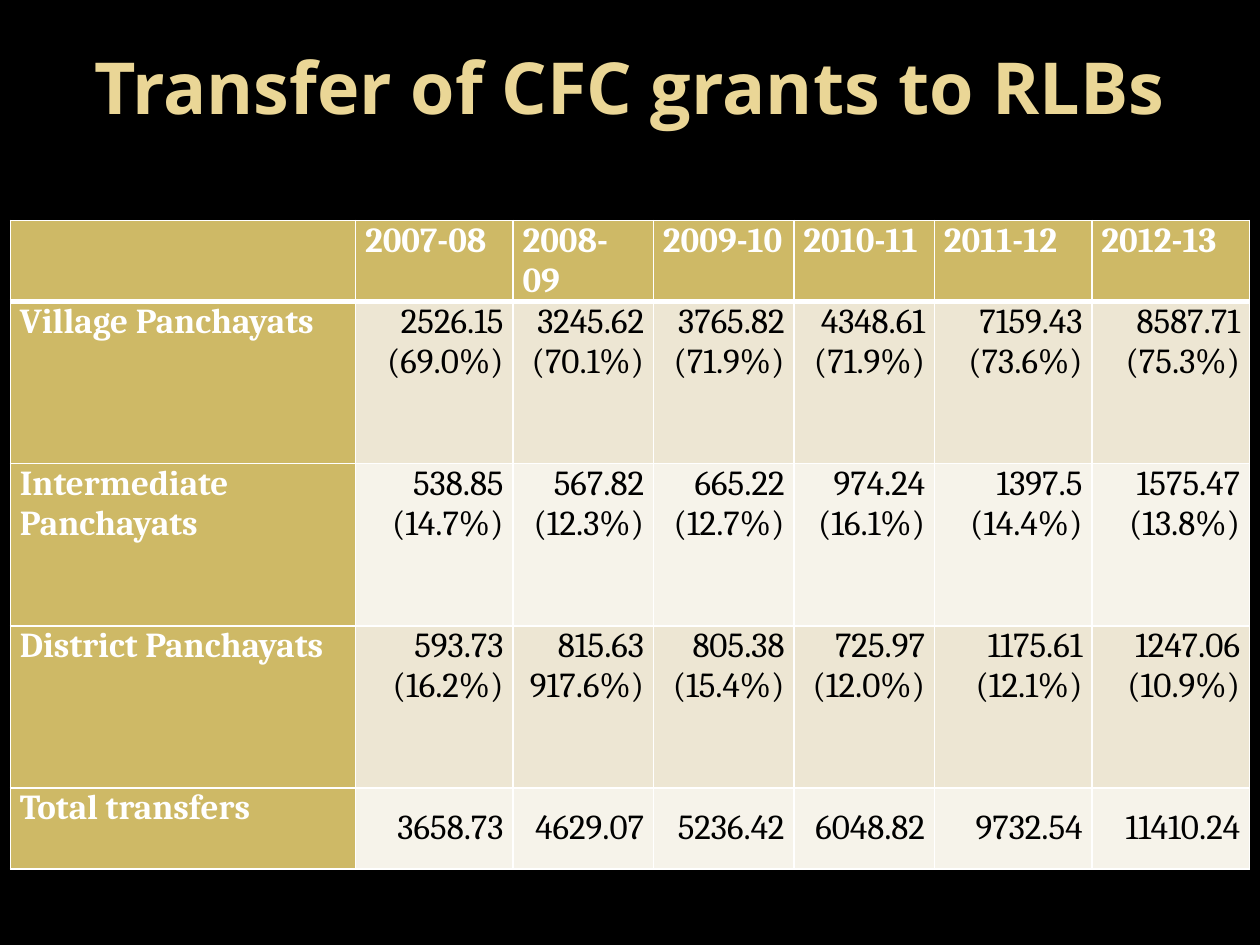
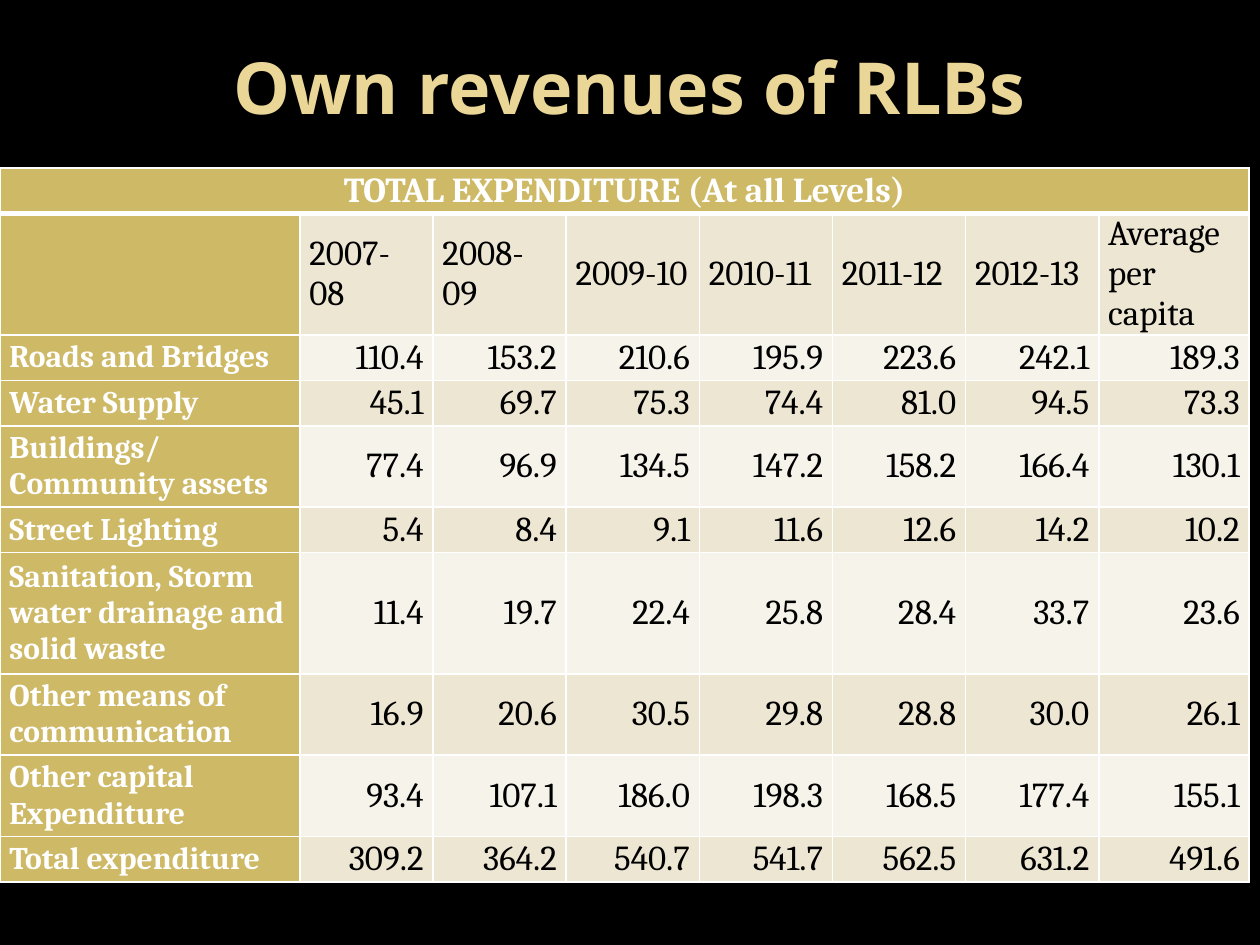
from dataclasses import dataclass

from lxml.etree import SubElement
from pptx import Presentation
from pptx.dml.color import RGBColor
from pptx.enum.text import MSO_ANCHOR, PP_ALIGN
from pptx.oxml.ns import qn
from pptx.slide import Slide
from pptx.table import Table, _Cell
from pptx.util import Pt

# Shared look
BLACK, WHITE = "000000", "FFFFFF"
TITLE_GOLD, LABEL_GOLD = "EAD696", "CEB966"
BANDS = ("F6F3EA", "EDE6D3")  # even and odd body rows
TITLE_FONT, TABLE_FONT = "Open Sans", "Cambria"
TABLE_SIZE = 20
TITLE_BOX = (6, 1.5, 708, 95)


@dataclass
class TableSlide:
    title: str
    left: float
    top: float
    column_widths: list[float]
    row_heights: list[float]
    rows: list[list[str]]
    label_size: float
    label_align: PP_ALIGN
    middle_from_row: int  # values are centred vertically from this row on
    middle_labels: bool
    has_banner: bool  # the first row is one merged heading


YEARS = ["2007-08", "2008-09", "2009-10", "2010-11", "2011-12", "2012-13"]

GRANTS = TableSlide(
    title="Transfer of CFC grants to RLBs",
    left=6, top=126,
    column_widths=[197.2, 90, 80.3, 80.3, 80.3, 90, 90],
    row_heights=[46.3, 92.7, 92.7, 92.7, 46.3],
    rows=[
        ["", *YEARS],
        ["Village Panchayats", "2526.15 (69.0%)", "3245.62 (70.1%)", "3765.82 (71.9%)",
         "4348.61 (71.9%)", "7159.43 (73.6%)", "8587.71 (75.3%)"],
        ["Intermediate Panchayats", "538.85 (14.7%)", "567.82 (12.3%)", "665.22 (12.7%)",
         "974.24 (16.1%)", "1397.5 (14.4%)", "1575.47 (13.8%)"],
        ["District Panchayats", "593.73 (16.2%)", "815.63 917.6%)", "805.38 (15.4%)",
         "725.97 (12.0%)", "1175.61 (12.1%)", "1247.06 (10.9%)"],
        ["Total transfers", "3658.73", "4629.07", "5236.42", "6048.82", "9732.54", "11410.24"],
    ],
    label_size=20, label_align=PP_ALIGN.JUSTIFY,
    middle_from_row=4, middle_labels=False, has_banner=False,
)

EXPENDITURE = TableSlide(
    title="Own revenues of RLBs",
    left=0, top=96,
    column_widths=[171.4, *[76.1] * 6, 86],
    row_heights=[26, 69.4, 26, 26, 46.4, 26, 69.4, 46.4, 46.4, 26],
    rows=[
        ["TOTAL EXPENDITURE (At all Levels)", *[""] * 7],
        ["", *YEARS, "Average per capita"],
        ["Roads and Bridges", "110.4", "153.2", "210.6", "195.9", "223.6", "242.1", "189.3"],
        ["Water Supply", "45.1", "69.7", "75.3", "74.4", "81.0", "94.5", "73.3"],
        ["Buildings/ Community assets",
         "77.4", "96.9", "134.5", "147.2", "158.2", "166.4", "130.1"],
        ["Street Lighting", "5.4", "8.4", "9.1", "11.6", "12.6", "14.2", "10.2"],
        ["Sanitation, Storm water drainage and solid waste",
         "11.4", "19.7", "22.4", "25.8", "28.4", "33.7", "23.6"],
        ["Other means of communication",
         "16.9", "20.6", "30.5", "29.8", "28.8", "30.0", "26.1"],
        ["Other capital Expenditure",
         "93.4", "107.1", "186.0", "198.3", "168.5", "177.4", "155.1"],
        ["Total expenditure", "309.2", "364.2", "540.7", "541.7", "562.5", "631.2", "491.6"],
    ],
    label_size=18, label_align=PP_ALIGN.LEFT,
    middle_from_row=0, middle_labels=True, has_banner=True,
)


def color(hex_string: str) -> RGBColor:
    return RGBColor.from_string(hex_string)


def set_font(paragraph, name: str, size: float, hex_color: str, bold: bool) -> None:
    font = paragraph.font
    font.name, font.size, font.bold = name, Pt(size), bold
    font.color.rgb = color(hex_color)


def set_borders(cell: _Cell, top: float, bottom: float) -> None:
    """White cell borders; widths in points."""
    properties = cell._tc.get_or_add_tcPr()
    for side, width in (("L", 1), ("R", 1), ("T", top), ("B", bottom)):
        line = SubElement(properties, qn(f"a:ln{side}"), w=str(Pt(width)))
        fill = SubElement(line, qn("a:solidFill"))
        SubElement(fill, qn("a:srgbClr"), val=WHITE)


def add_title(slide: Slide, text: str) -> None:
    title = slide.shapes.title
    title.left, title.top, title.width, title.height = map(Pt, TITLE_BOX)
    frame = title.text_frame
    frame.text = text
    frame.vertical_anchor = MSO_ANCHOR.MIDDLE
    paragraph = frame.paragraphs[0]
    paragraph.alignment = PP_ALIGN.CENTER
    set_font(paragraph, TITLE_FONT, 41, TITLE_GOLD, True)


def format_cell(cell: _Cell, content: TableSlide, row: int, column: int) -> None:
    is_header, is_label = row == 0, column == 0
    gold = is_header or is_label

    # Borders, fill and insets
    set_borders(cell, top=3 if row == 1 else 1, bottom=3 if is_header else 1)
    cell.fill.solid()
    cell.fill.fore_color.rgb = color(LABEL_GOLD if gold else BANDS[row % 2])
    cell.margin_left = cell.margin_right = Pt(5.4)
    cell.margin_top = cell.margin_bottom = 0
    middle = content.middle_labels if is_label else row >= content.middle_from_row
    cell.vertical_anchor = MSO_ANCHOR.MIDDLE if middle else MSO_ANCHOR.TOP

    # Text
    cell.text = content.rows[row][column]
    paragraph = cell.text_frame.paragraphs[0]
    if is_header and content.has_banner:
        paragraph.alignment = PP_ALIGN.CENTER
    elif gold or (content.has_banner and row == 1):
        paragraph.alignment = content.label_align
    else:
        paragraph.alignment = PP_ALIGN.RIGHT
    size = content.label_size if is_label and not is_header else TABLE_SIZE
    set_font(paragraph, TABLE_FONT, size, WHITE if gold else BLACK, gold)


def add_table(slide: Slide, content: TableSlide) -> Table:
    widths, heights = content.column_widths, content.row_heights
    table = slide.shapes.add_table(
        len(heights), len(widths), Pt(content.left), Pt(content.top),
        Pt(sum(widths)), Pt(sum(heights))).table
    for column, width in zip(table.columns, widths):
        column.width = Pt(width)
    for row, height in zip(table.rows, heights):
        row.height = Pt(height)
    for row in range(len(heights)):
        for column in range(len(widths)):
            format_cell(table.cell(row, column), content, row, column)
    if content.has_banner:
        table.cell(0, 0).merge(table.cell(0, len(widths) - 1))
    return table


def main() -> None:
    presentation = Presentation()
    presentation.slide_width, presentation.slide_height = Pt(720), Pt(540)
    background = presentation.slide_master.background.fill
    background.solid()
    background.fore_color.rgb = color(BLACK)

    title_only = presentation.slide_layouts[5]
    for content in (GRANTS, EXPENDITURE):
        slide = presentation.slides.add_slide(title_only)
        add_title(slide, content.title)
        add_table(slide, content)
    presentation.save("out.pptx")


if __name__ == "__main__":
    main()
